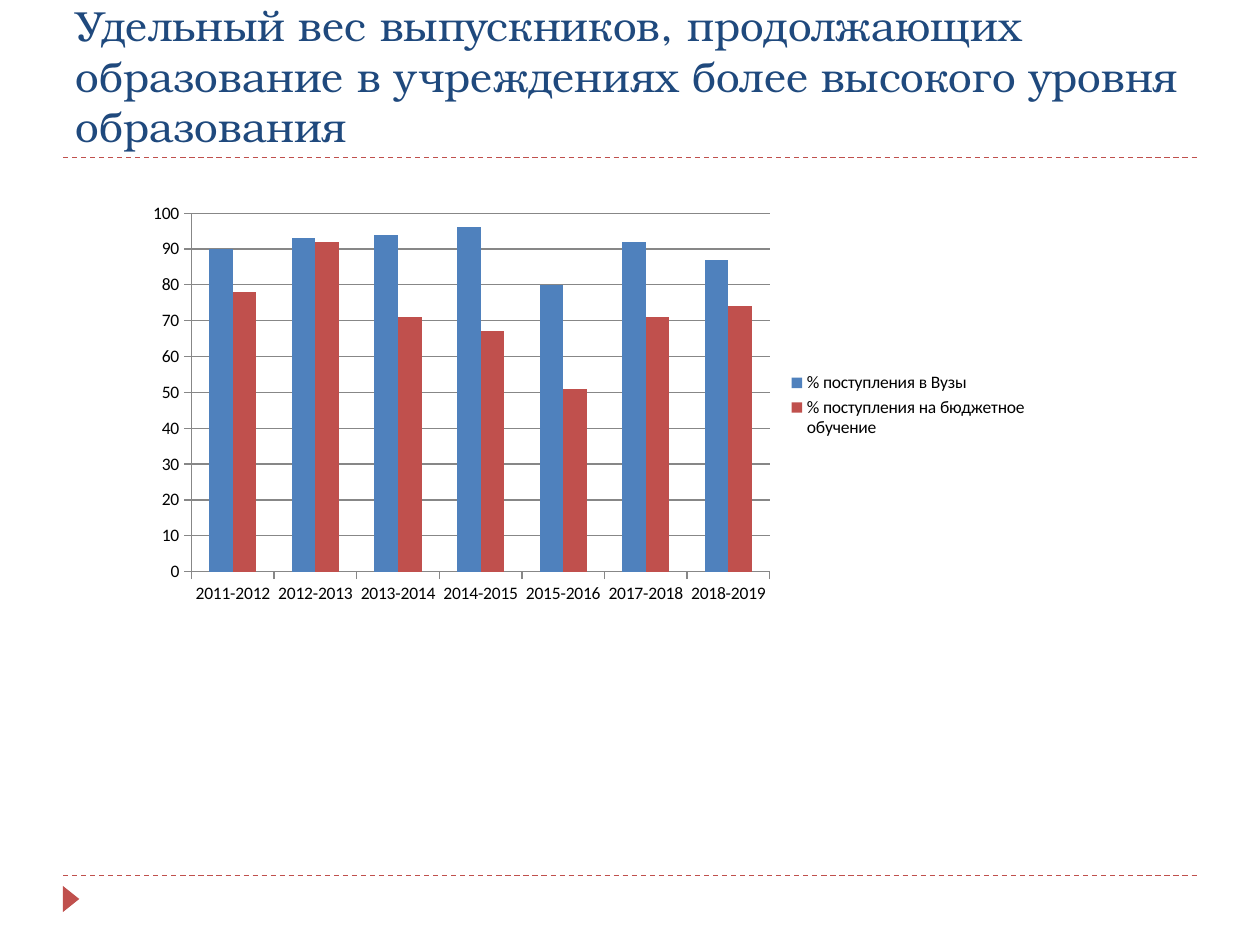
from lxml.etree import SubElement
from pptx import Presentation
from pptx.chart.data import CategoryChartData
from pptx.dml.color import RGBColor
from pptx.enum.chart import XL_CHART_TYPE, XL_LEGEND_POSITION, XL_TICK_MARK
from pptx.enum.dml import MSO_LINE
from pptx.enum.shapes import MSO_CONNECTOR, MSO_SHAPE
from pptx.enum.text import MSO_ANCHOR, MSO_AUTO_SIZE, PP_ALIGN
from pptx.oxml.ns import qn
from pptx.util import Pt

BLUE, RED, NAVY, GREY, BLACK = "4F81BD", "C0504D", "1F497D", "878787", "000000"
TITLE = ("Удельный вес выпускников, продолжающих образование "
         "в учреждениях более высокого уровня образования")
YEARS = ["2011-2012", "2012-2013", "2013-2014", "2014-2015",
         "2015-2016", "2017-2018", "2018-2019"]
ADMISSIONS = [
    ("% поступления в Вузы", BLUE, [90, 93, 94, 96, 80, 92, 87]),
    ("% поступления на бюджетное обучение", RED, [78, 92, 71, 67, 51, 71, 74]),
]
PLOT_AREA = {"x": 0.06, "y": 0.04, "w": 0.64, "h": 0.86}


def rgb(color):
    return RGBColor.from_string(color)


def set_all(target, values):
    for name, value in values.items():
        setattr(target, name, value)


def format_font(font, name, size, color):
    set_all(font, {"name": name, "size": Pt(size), "bold": False})
    font.color.rgb = rgb(color)


def add_title(slide):
    title = slide.shapes.title
    set_all(title, {"left": Pt(36), "top": Pt(18), "width": Pt(648), "height": Pt(72)})
    frame = title.text_frame
    frame.text = TITLE
    set_all(frame, {"word_wrap": True, "auto_size": MSO_AUTO_SIZE.NONE,
                    "vertical_anchor": MSO_ANCHOR.BOTTOM})
    paragraph = frame.paragraphs[0]
    paragraph.alignment = PP_ALIGN.LEFT
    format_font(paragraph.runs[0].font, "TeX Gyre Bonum", 24, NAVY)


def add_dashed_rule(slide, y):
    rule = slide.shapes.add_connector(MSO_CONNECTOR.STRAIGHT, Pt(36), Pt(y), Pt(684), Pt(y))
    set_all(rule.line, {"width": Pt(0.75), "dash_style": MSO_LINE.DASH})
    rule.line.color.rgb = rgb(RED)
    SubElement(rule._element.spPr, qn("a:effectLst"))


def add_corner_marker(slide):
    marker = slide.shapes.add_shape(MSO_SHAPE.ISOSCELES_TRIANGLE,
                                    Pt(33.1), Pt(509), Pt(15), Pt(9.4))
    marker.rotation = 90
    marker.shadow.inherit = False
    marker.fill.solid()
    marker.fill.fore_color.rgb = rgb(RED)
    marker.line.fill.background()


def place_plot_area(chart):
    """Fix the inner plot area as fractions of the chart."""
    plot_area = chart._chartSpace.chart.plotArea
    layout = plot_area.find(qn("c:layout"))
    if layout is None:
        layout = SubElement(plot_area, qn("c:layout"))
        plot_area.insert(0, layout)
    manual = SubElement(layout, qn("c:manualLayout"))
    settings = {"layoutTarget": "inner", "xMode": "edge", "yMode": "edge", **PLOT_AREA}
    for name, value in settings.items():
        SubElement(manual, qn(f"c:{name}")).set("val", str(value))


def add_admissions_chart(slide):
    data = CategoryChartData()
    data.categories = YEARS
    for name, _, values in ADMISSIONS:
        data.add_series(name, values)
    chart = slide.shapes.add_chart(XL_CHART_TYPE.COLUMN_CLUSTERED, Pt(78.5), Pt(112.3),
                                   Pt(516.2), Pt(238.3), data).chart
    chart.has_title = False
    format_font(chart.font, "Calibri", 10, BLACK)
    chart.has_legend = True
    set_all(chart.legend, {"position": XL_LEGEND_POSITION.RIGHT, "include_in_layout": False})

    plot = chart.plots[0]
    set_all(plot, {"gap_width": 150, "overlap": 0, "vary_by_categories": False})
    for series, (_, color, _) in zip(plot.series, ADMISSIONS):
        series.format.fill.solid()
        series.format.fill.fore_color.rgb = rgb(color)

    percent_axis = chart.value_axis
    set_all(percent_axis, {"minimum_scale": 0, "maximum_scale": 100, "major_unit": 10,
                           "has_major_gridlines": True})
    for axis in (chart.category_axis, percent_axis):
        axis.major_tick_mark = XL_TICK_MARK.OUTSIDE
    for lined in (chart.category_axis, percent_axis, percent_axis.major_gridlines):
        lined.format.line.width = Pt(0.75)
        lined.format.line.color.rgb = rgb(GREY)
    place_plot_area(chart)


def main():
    presentation = Presentation()
    set_all(presentation, {"slide_width": Pt(720), "slide_height": Pt(540)})
    slide = presentation.slides.add_slide(presentation.slide_layouts[5])
    for y in (500.4, 90):
        add_dashed_rule(slide, y)
    add_corner_marker(slide)
    add_title(slide)
    add_admissions_chart(slide)
    presentation.save("out.pptx")


if __name__ == "__main__":
    main()
